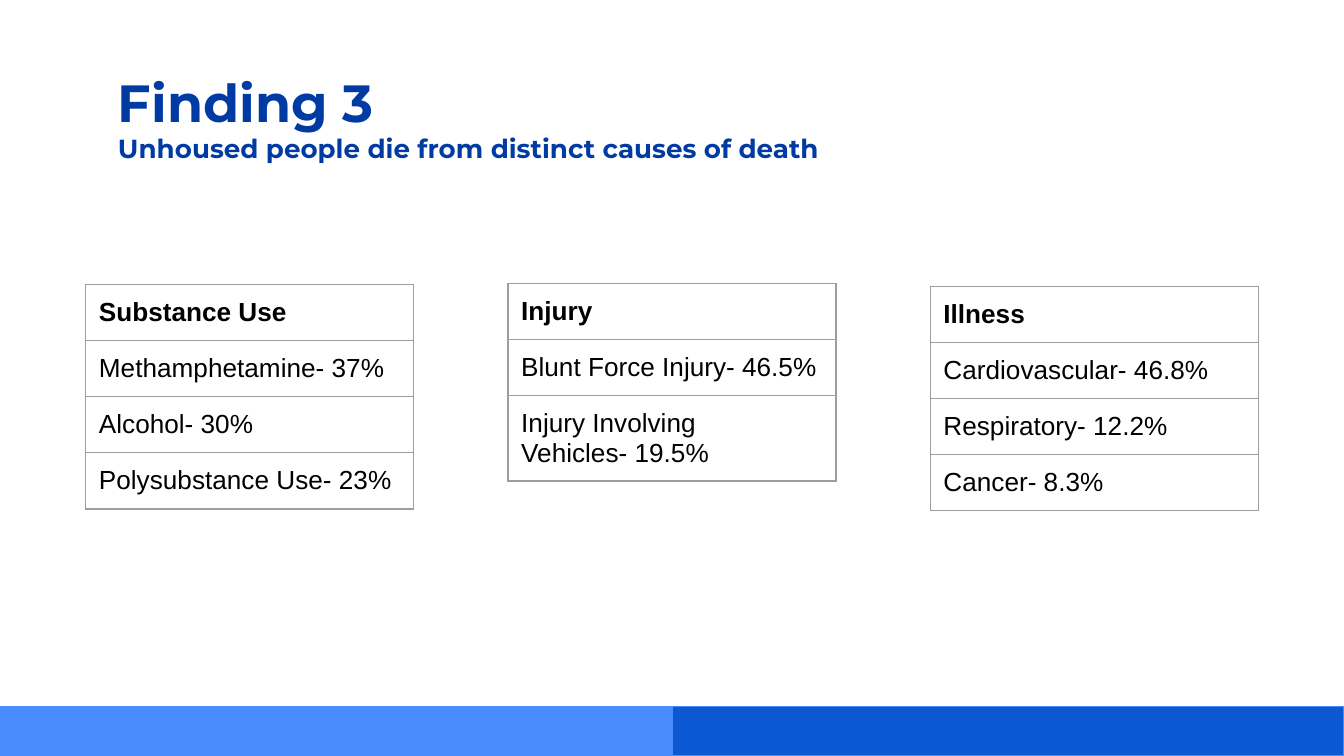
from lxml.etree import SubElement as Sub
from pptx import Presentation
from pptx.dml.color import RGBColor
from pptx.enum.shapes import MSO_SHAPE as Shape
from pptx.enum.text import MSO_ANCHOR as Anchor, MSO_AUTO_SIZE as Auto, PP_ALIGN as Align
from pptx.oxml.ns import qn
from pptx.util import Cm, Pt


def color(code):
    return RGBColor.from_string(code)


class Deck:
    blue, sky, navy = "003BA3", "4A8CFF", "0C58D3"
    ink, grid = "000000", "9E9E9E"
    head, body = "Montserrat", "Arial"
    pad, row, wide = 0.25, 1.06, 6.2

    def __init__(self):
        self.show = Presentation()
        self.show.slide_width = Cm(25.4)
        self.show.slide_height = Cm(14.29)
        self.slide = self.show.slides.add_slide(self.show.slide_layouts[5])

    def inset(self, box):
        box.margin_left = box.margin_right = Cm(self.pad)
        box.margin_top = box.margin_bottom = Cm(self.pad)

    def style(self, para, face, size, code, bold):
        para.alignment = Align.LEFT
        font = para.font
        font.name, font.size, font.bold = face, Pt(size), bold
        font.color.rgb = color(code)

    def title(self, lines, sizes):
        shape = self.slide.shapes.title
        shape.left, shape.top = Cm(1.98), Cm(1.07)
        shape.width, shape.height = Cm(21.41), Cm(1.6)
        frame = shape.text_frame
        self.inset(frame)
        frame.auto_size = Auto.NONE
        frame.vertical_anchor = Anchor.TOP
        frame.text = "\n".join(lines)
        for para, size in zip(frame.paragraphs, sizes):
            self.style(para, self.head, size, self.blue, True)

    def border(self, cell):
        props = cell._tc.get_or_add_tcPr()
        for spot, side in enumerate(("lnL", "lnR", "lnT", "lnB")):
            line = Sub(props, qn(f"a:{side}"), w=str(Pt(0.75)))
            fill = Sub(line, qn("a:solidFill"))
            Sub(fill, qn("a:srgbClr"), val=self.grid)
            props.insert(spot, line)

    def table(self, left, top, items):
        count = len(items)
        table = self.slide.shapes.add_table(
            count, 1, Cm(left), Cm(top), Cm(self.wide), Cm(self.row * count)).table
        table.first_row = table.horz_banding = False
        for index, item in enumerate(items):
            cell = table.cell(index, 0)
            cell.text = item
            cell.fill.background()
            self.inset(cell)
            self.border(cell)
            for para in cell.text_frame.paragraphs:
                self.style(para, self.body, 14, self.ink, index == 0)

    def bar(self, left, code):
        shape = self.slide.shapes.add_shape(
            Shape.RECTANGLE, Cm(left), Cm(13.36), Cm(12.7), Cm(0.92))
        shape.shadow.inherit = False
        shape.fill.solid()
        shape.fill.fore_color.rgb = color(code)
        shape.line.color.rgb = color(self.sky)
        shape.line.width = Pt(0.75)


def main():
    deck = Deck()
    deck.title(["Finding 3", "Unhoused people die from distinct causes of death"], [28, 14])
    groups = [
        (5.38, ["Substance Use", "Methamphetamine- 37%", "Alcohol- 30%",
                "Polysubstance Use- 23%"]),
        (5.36, ["Injury", "Blunt Force Injury- 46.5%",
                "Injury Involving\nVehicles- 19.5%"]),
        (5.41, ["Illness", "Cardiovascular- 46.8%", "Respiratory- 12.2%",
                "Cancer- 8.3%"]),
    ]
    for index, (top, items) in enumerate(groups):
        deck.table(1.62 + 7.98 * index, top, items)
    for index, code in enumerate((deck.sky, deck.navy)):
        deck.bar(12.7 * index, code)
    deck.show.save("out.pptx")


if __name__ == "__main__":
    main()
